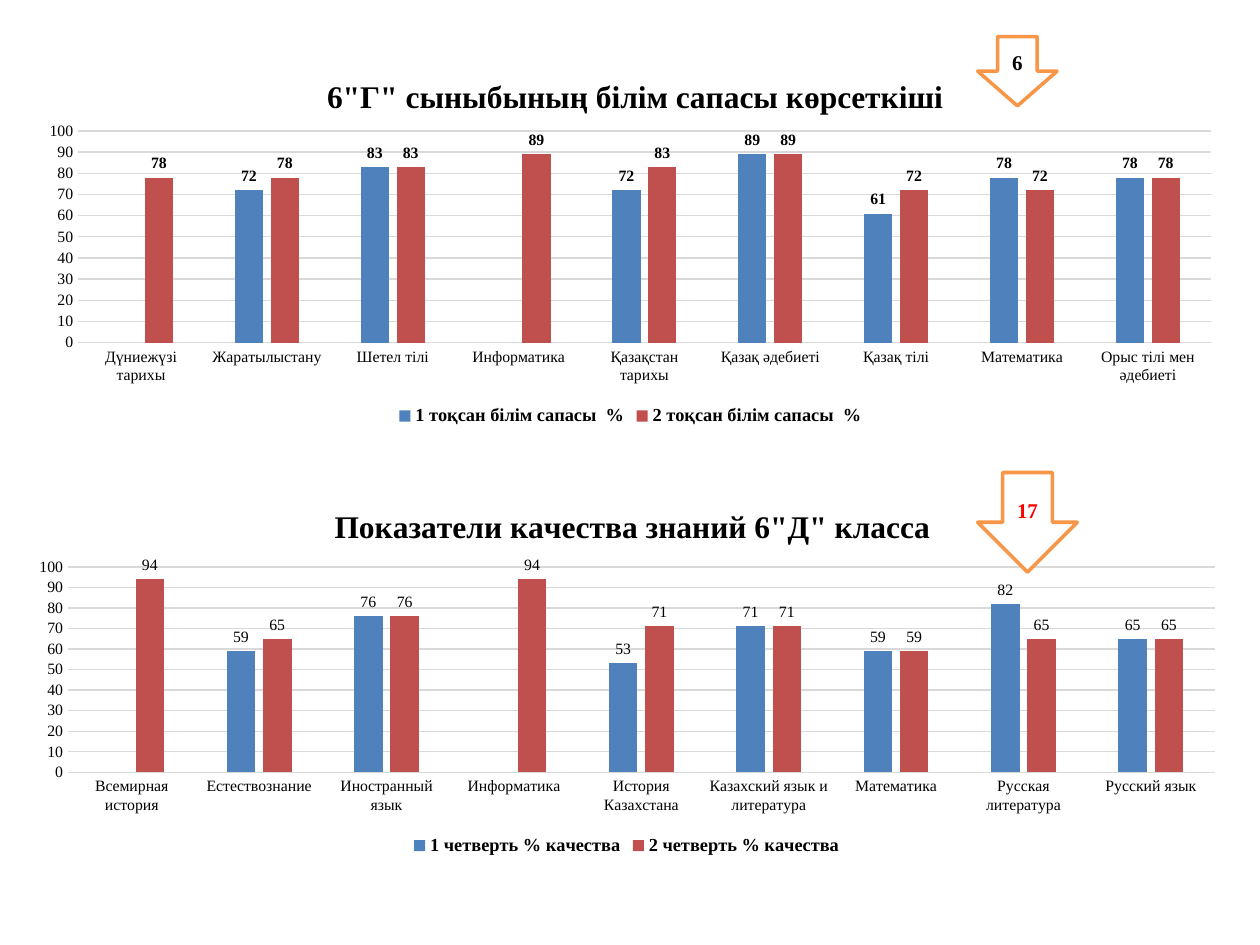
from lxml import etree
from pptx import Presentation
from pptx.chart.data import CategoryChartData
from pptx.dml.color import RGBColor
from pptx.enum.chart import XL_CHART_TYPE, XL_LABEL_POSITION, XL_LEGEND_POSITION, XL_TICK_MARK
from pptx.enum.shapes import MSO_SHAPE
from pptx.enum.text import MSO_ANCHOR, PP_ALIGN
from pptx.oxml.ns import qn
from pptx.util import Inches, Pt

COLUMNS = XL_CHART_TYPE.COLUMN_CLUSTERED
OUTSIDE = XL_LABEL_POSITION.OUTSIDE_END
BOTTOM = XL_LEGEND_POSITION.BOTTOM
NO_TICK = XL_TICK_MARK.NONE
DOWN_ARROW = MSO_SHAPE.DOWN_ARROW
MIDDLE = MSO_ANCHOR.MIDDLE
CENTER = PP_ALIGN.CENTER

COLORS = {name: RGBColor.from_string(value) for name, value in {
    "black": "000000", "white": "FFFFFF", "red": "FF0000", "orange": "F79646",
    "grid": "D9D9D9", "first": "4F81BD", "second": "C0504D"}.items()}

CHART_HEIGHT = 3
ARROW_LEFT = 7.76

# box is left, top, width; plot is left, top, width, height inside the chart, in inches
CHARTS = [
    {"title": '6"Г" сыныбының білім сапасы көрсеткіші',
     "box": (0.2, 0.42, 9.61), "plot": (0.42, 0.62, 8.99, 1.68), "title_at": (2.35, 0.15),
     "bold_labels": True,
     "subjects": ["Дүниежүзі тарихы", "Жаратылыстану", "Шетел тілі", "Информатика",
                  "Қазақстан тарихы", "Қазақ әдебиеті", "Қазақ тілі", "Математика",
                  "Орыс тілі мен әдебиеті"],
     "terms": {"1 тоқсан білім сапасы  %": (None, 72, 83, None, 72, 89, 61, 78, 78),
               "2 тоқсан білім сапасы  %": (78, 78, 83, 89, 83, 89, 72, 72, 78)}},
    {"title": 'Показатели качества знаний 6"Д" класса',
     "box": (0.12, 3.83, 9.71), "plot": (0.42, 0.67, 9.1, 1.63), "title_at": (2.49, 0.15),
     "bold_labels": False,
     "subjects": ["Всемирная история", "Естествознание", "Иностранный язык", "Информатика",
                  "История Казахстана", "Казахский язык и литература", "Математика",
                  "Русская литература", "Русский язык"],
     "terms": {"1 четверть % качества": (None, 59, 76, None, 53, 71, 59, 82, 65),
               "2 четверть % качества": (94, 65, 76, 94, 71, 71, 59, 65, 65)}},
]
# text, top, width, height, text colour
ARROWS = [("6", 0.29, 0.63, 0.55, "black"), ("17", 3.75, 0.79, 0.79, "red")]


def write(frame, text, *, size, color="black", bold=True):
    paragraph = frame.paragraphs[0]
    paragraph.alignment = CENTER
    run = paragraph.add_run()
    run.text = text
    run.font.name, run.font.size, run.font.bold = "Times New Roman", Pt(size), bold
    run.font.color.rgb = COLORS[color]


def place(element, index, **shares):
    """Give a chart part a manual layout, as shares of the chart's size."""
    for old in element.findall(qn("c:layout")):
        element.remove(old)
    layout = etree.Element(qn("c:layout"))
    manual = etree.SubElement(layout, qn("c:manualLayout"))
    settings = {"xMode": "edge", "yMode": "edge", **shares}
    if "w" in shares:
        settings = {"layoutTarget": "inner", **settings}
    for name, value in settings.items():
        etree.SubElement(manual, qn(f"c:{name}")).set("val", str(value))
    element.insert(index, layout)


presentation = Presentation()
presentation.slide_width, presentation.slide_height = Inches(10), Inches(7.5)
slide = presentation.slides.add_slide(presentation.slide_layouts[6])

for content in CHARTS:
    left, top, width = content["box"]
    data = CategoryChartData()
    data.categories = content["subjects"]
    for name, values in content["terms"].items():
        data.add_series(name, values)
    chart = slide.shapes.add_chart(COLUMNS, Inches(left), Inches(top), Inches(width),
                                   Inches(CHART_HEIGHT), data).chart

    chart.has_title = True
    write(chart.chart_title.text_frame, content["title"], size=18)
    chart.has_legend = True
    chart.legend.position = BOTTOM
    chart.legend.include_in_layout = False

    category_axis, value_axis = chart.category_axis, chart.value_axis
    value_axis.minimum_scale, value_axis.maximum_scale, value_axis.major_unit = 0, 100, 10
    value_axis.format.line.fill.background()
    for axis in (category_axis, value_axis):
        axis.major_tick_mark = axis.minor_tick_mark = NO_TICK
    for line in (category_axis.format.line, value_axis.major_gridlines.format.line):
        line.color.rgb = COLORS["grid"]
        line.width = Pt(0.75)

    plot = chart.plots[0]
    plot.gap_width, plot.overlap, plot.vary_by_categories = 219, -27, False
    fonts = [(chart.font, 10, False), (chart.legend.font, 10.5, True),
             (category_axis.tick_labels.font, 9, False), (value_axis.tick_labels.font, 9, False)]
    for series, color in zip(plot.series, ("first", "second")):
        series.format.fill.solid()
        series.format.fill.fore_color.rgb = COLORS[color]
        labels = series.data_labels
        labels.show_value = True
        labels.position = OUTSIDE
        fonts.append((labels.font, 9, content["bold_labels"]))
    for font, size, bold in fonts:
        font.name, font.size, font.bold = "Times New Roman", Pt(size), bold
        font.color.rgb = COLORS["black"]

    plot_left, plot_top, plot_width, plot_height = content["plot"]
    title_left, title_top = content["title_at"]
    chart_root = chart.element.find(qn("c:chart"))
    place(chart_root.find(qn("c:plotArea")), 0, x=plot_left / width, y=plot_top / CHART_HEIGHT,
          w=plot_width / width, h=plot_height / CHART_HEIGHT)
    place(chart_root.find(qn("c:title")), 1, x=title_left / width, y=title_top / CHART_HEIGHT)

for text, top, width, height, color in ARROWS:
    arrow = slide.shapes.add_shape(DOWN_ARROW, Inches(ARROW_LEFT), Inches(top),
                                   Inches(width), Inches(height))
    arrow.shadow.inherit = False
    arrow.fill.solid()
    arrow.fill.fore_color.rgb = COLORS["white"]
    arrow.line.color.rgb = COLORS["orange"]
    arrow.line.width = Pt(2)
    arrow.text_frame.vertical_anchor = MIDDLE
    write(arrow.text_frame, text, size=12, color=color)

presentation.save("out.pptx")
